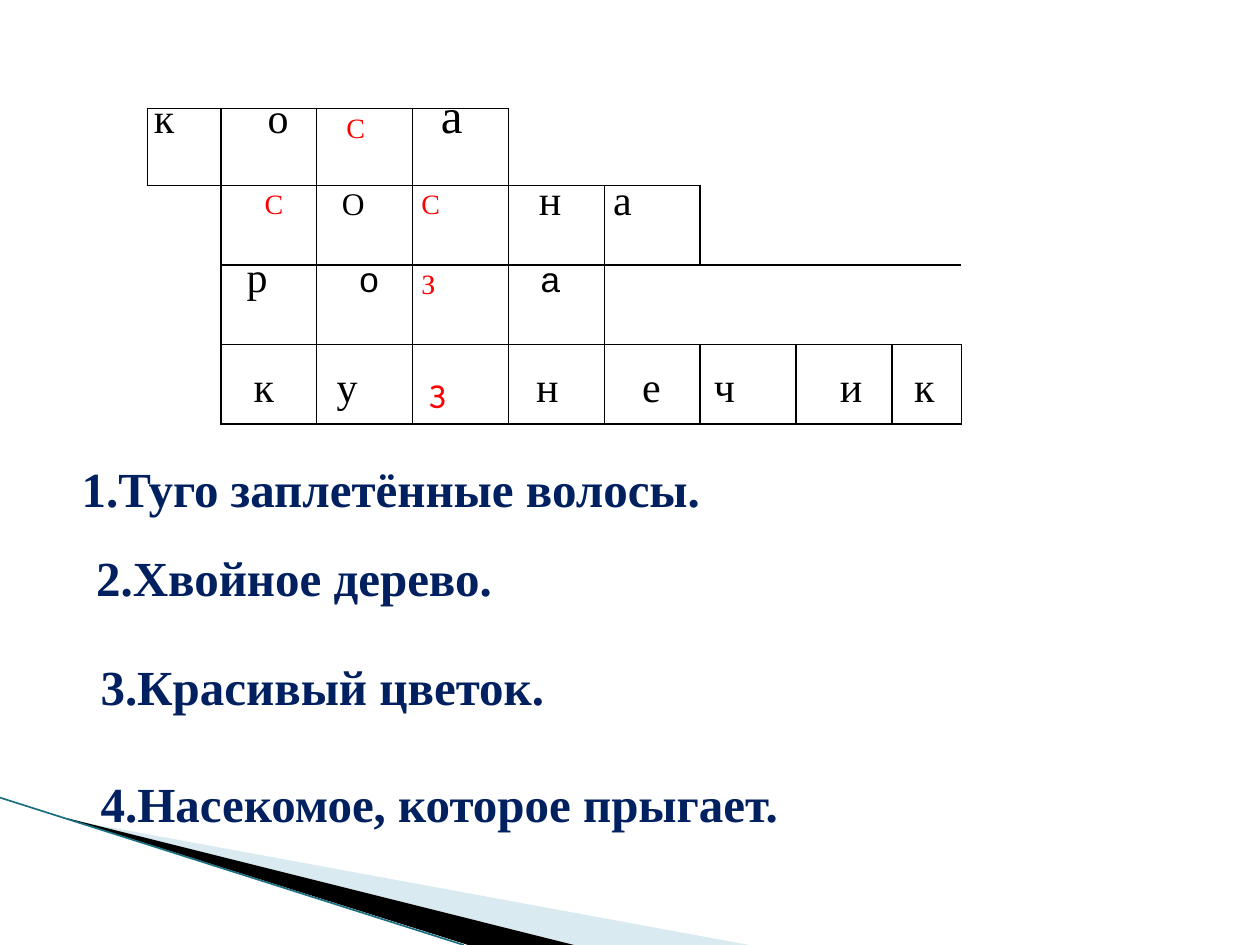
from pptx import Presentation
from pptx.dml.color import RGBColor
from pptx.enum.shapes import MSO_CONNECTOR as Conn
from pptx.enum.text import MSO_AUTO_SIZE as Auto
from pptx.oxml.ns import qn
from pptx.util import Pt
from lxml.etree import SubElement as Sub

SERIF, SANS = "Times New Roman", "Arial"
RED, NAVY, BLACK = "FF0000", "002060", "000000"
PAD = 7.2  # left inset of a text box


def rgb(code):
    return RGBColor.from_string(code)


class Page:
    def __init__(self, slide, face=SERIF, ink=BLACK):
        self.slide, self.face, self.ink = slide, face, ink
        self.shapes = slide.shapes

    def style(self, font, size, color=None, face=None, bold=False):
        font.size, font.bold, font.name = Pt(size), bold, face or self.face
        font.color.rgb = rgb(color or self.ink)

    def wedge(self, points, color, alpha=None):
        spots = [(Pt(x), Pt(y)) for x, y in points]
        pen = self.shapes.build_freeform(*spots[0])
        pen.add_line_segments(spots[1:])
        shape = pen.convert_to_shape()
        shape.shadow.inherit = False
        shape.fill.solid()
        shape.fill.fore_color.rgb = rgb(color)
        shape.line.fill.background()
        if alpha:
            tint = shape.fill._xPr.find(".//" + qn("a:srgbClr"))
            Sub(tint, qn("a:alpha"), val=str(alpha * 1000))

    def line(self, x1, y1, x2, y2, color, width):
        line = self.shapes.add_connector(
            Conn.STRAIGHT, Pt(x1), Pt(y1), Pt(x2), Pt(y2))
        line.line.color.rgb = rgb(color)
        line.line.width = Pt(width)
        Sub(line._element.spPr, qn("a:effectLst"))

    def box(self, x, y, w, h, indent=0, drop=0):
        frame = self.shapes.add_textbox(Pt(x), Pt(y), Pt(w), Pt(h)).text_frame
        frame.word_wrap = True
        frame.auto_size = Auto.SHAPE_TO_FIT_TEXT
        frame.margin_left = Pt(PAD + indent)
        frame.margin_top = Pt(3.6 + drop)
        return frame.paragraphs[0]

    def clue(self, text, x, y, w, indent=0):
        para = self.box(x, y, w, 41, indent)
        para.text = text
        self.style(para.font, 28, NAVY, bold=True)

    def word(self, x, y, w, h, marks, drop=0):
        """Letters placed by tab stops; marks hold (letter, slide x, size, face)."""
        para = self.box(x, y, w, h, drop=drop)
        tabs = Sub(para._p.get_or_add_pPr(), qn("a:tabLst"))
        for mark, spot, size, face in marks:
            Sub(tabs, qn("a:tab"), pos=str(Pt(spot - x - PAD)), algn="l")
            run = para.add_run()
            run.text = "\t" + mark
            self.style(run.font, size, face=face)

    def grid(self, x, y, cols, rows):
        table = self.shapes.add_table(
            len(rows), len(cols), Pt(x), Pt(y), Pt(sum(cols)), Pt(sum(rows))).table
        for col, size in zip(table.columns, cols):
            col.width = Pt(size)
        for row, size in zip(table.rows, rows):
            row.height = Pt(size)
        return table

    def edges(self, cell, sides):
        cell.fill.background()
        props = cell._tc.get_or_add_tcPr()
        for i, side in enumerate("LRTB"):
            edge = Sub(props, qn("a:ln" + side), w=str(Pt(1)))
            props.remove(edge)
            props.insert(i, edge)
            if side in sides:
                paint = Sub(edge, qn("a:solidFill"))
                Sub(paint, qn("a:srgbClr"), val=self.ink)
            else:
                Sub(edge, qn("a:noFill"))

    def mark(self, cell, text, size, face, left, top):
        cell.margin_left, cell.margin_right = Pt(5 + left), Pt(5)
        cell.margin_top, cell.margin_bottom = Pt(top), Pt(0)
        para = cell.text_frame.paragraphs[0]
        para.text = text
        para.line_spacing = 1.15
        self.style(para.font, size, RED, face)


# First and last boxed column of each crossword row
SPANS = [(0, 3), (1, 5), (1, 4), (1, 8)]
STEPS = {"L": (0, -1), "R": (0, 1), "T": (-1, 0), "B": (1, 0)}


def boxed(row, col):
    return 0 <= row < len(SPANS) and SPANS[row][0] <= col <= SPANS[row][1]


def sides(row, col):
    """A side is drawn when a boxed cell lies on it, or on the long middle rule."""
    found = {s for s, (dr, dc) in STEPS.items()
             if boxed(row, col) or boxed(row + dr, col + dc)}
    if col and row in (1, 2):
        found.add("B" if row == 1 else "T")
    return found


def main():
    deck = Presentation()
    deck.slide_width, deck.slide_height = Pt(720), Pt(540)
    page = Page(deck.slides.add_slide(deck.slide_layouts[6]))

    # Corner decoration
    page.wedge([(39.6, 468.5), (428, 540), (328, 540), (39.6, 468)], "A0CBDC", 40)
    page.wedge([(38, 467.5), (328, 540), (267.5, 540), (39, 468)], BLACK)
    page.line(0, 455.8, 265, 540, "1A6F80", 0.95)

    # Clues below the grid
    page.clue("1.Туго заплетённые волосы.", 39.6, 258.5, 472)
    page.clue("2.Хвойное дерево.", 33.8, 309.6, 484, indent=14)
    page.clue("3.Красивый цветок.", 50.4, 371.5, 366)
    page.clue("4.Насекомое, которое прыгает.", 50.4, 438.5, 472)

    # Crossword grid
    cols = [42] + [54.8] * 7 + [39.6]
    table = page.grid(84.2, 61.9, cols, [44] + [45.5] * 3)
    for row, (_, last) in enumerate(SPANS):
        for col in range(len(cols)):
            page.edges(table.cell(row, col), sides(row, col))
        if last < len(cols) - 1:
            table.cell(row, last + 1).merge(table.cell(row, len(cols) - 1))

    # Key letters in red
    for row, col, text, size, face, left, top in [
            (0, 2, "С", 16, SERIF, 12, 0), (1, 1, "С", 16, SERIF, 20, 0),
            (1, 3, "С", 16, SERIF, 0, 0), (2, 3, "З", 16, SERIF, 0, 0),
            (3, 3, "З", 20, "Calibri", 4.5, 14)]:
        page.mark(table.cell(row, col), text, size, face, left, top)

    # Other letters of the four words
    page.word(73.4, 44.6, 270, 41, [
        ("к", 88, 24, SERIF), ("о", 153, 24, SERIF), ("а", 252, 28, SERIF)])
    page.word(123.8, 95.8, 270, 36.7, [
        ("О", 195.5, 18, SERIF), ("н", 308, 24, SERIF), ("а", 350.5, 24, SERIF)])
    page.word(129.6, 135.4, 286.6, 41, [
        ("р", 141, 24, SERIF), ("о", 205.5, 20, SANS), ("а", 309, 20, SANS)], drop=4)
    spots = [145, 192.5, 306.5, 367, 408, 480, 522.5]
    page.word(118, 202.3, 438.5, 36.7, [
        (mark, spot, 24, SERIF) for mark, spot in zip("кунечик", spots)])

    deck.save("out.pptx")


if __name__ == "__main__":
    main()
